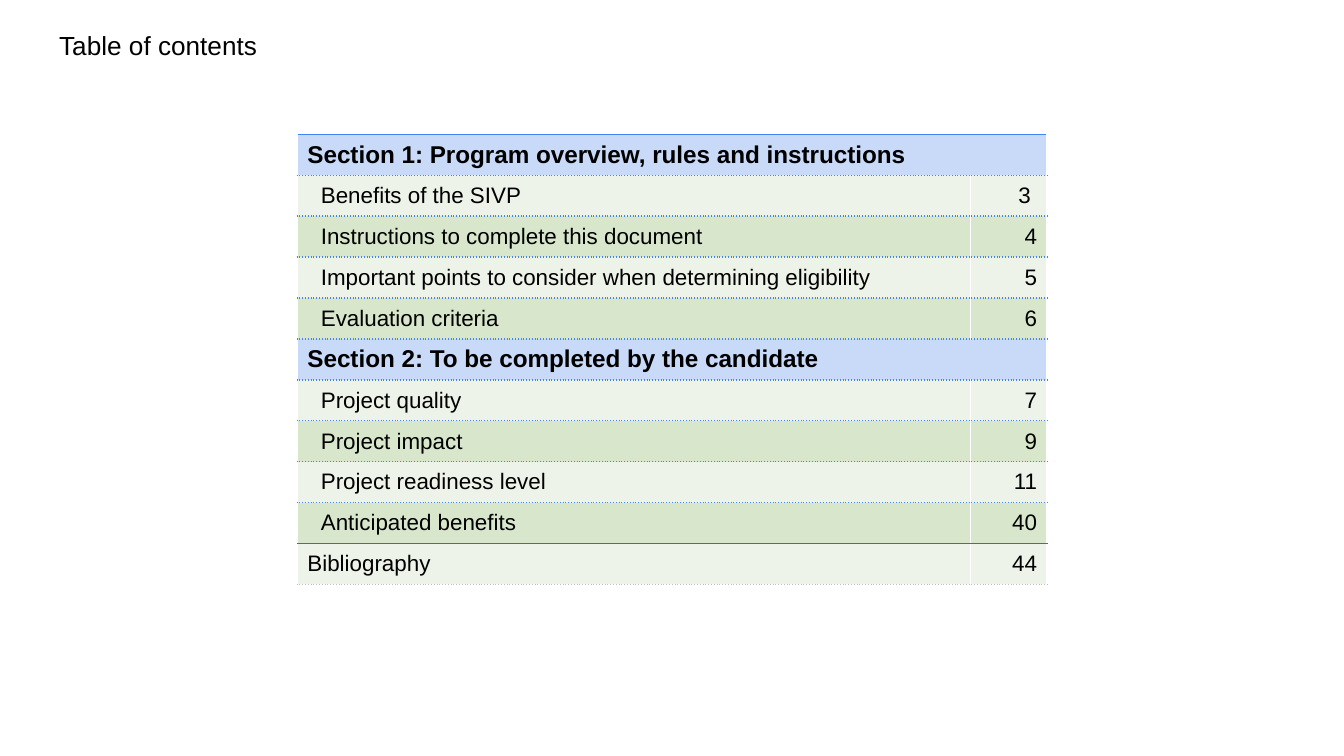
from lxml import etree
from pptx import Presentation
from pptx import util as u
from pptx.dml.color import RGBColor
from pptx.enum import text
from pptx.oxml import ns

COLORS = {
    "ink": "000000", "section": "C9DAF8", "light": "EDF3E8", "dark": "D8E7CB",
    "white": "FFFFFF", "blue": "4285F4", "gray": "63666A", "silver": "BFBFBF",
}
CONTENTS = [
    ("Section 1: Program overview, rules and instructions", None),
    ("Benefits of the SIVP", "3 "),
    ("Instructions to complete this document", "4"),
    ("Important points to consider when determining eligibility", "5"),
    ("Evaluation criteria", "6"),
    ("Section 2: To be completed by the candidate", None),
    ("Project quality", "7"),
    ("Project impact", "9"),
    ("Project readiness level", "11"),
    ("Anticipated benefits", "40"),
    ("Bibliography", "44"),
]
ROW_HEIGHT = 21.93
COLUMN_WIDTHS = (360.7, 41)
INDENT = 7.2


def write(paragraph, wording, size, bold=False):
    run = paragraph.add_run()
    run.text = wording
    run.font.color.rgb = RGBColor.from_string(COLORS["ink"])
    for name, value in {"name": "Arial", "size": u.Pt(size), "bold": bold}.items():
        setattr(run.font, name, value)


def border(cell, side, color, dash="solid"):
    line = etree.SubElement(cell._tc.get_or_add_tcPr(), ns.qn(f"a:ln{side}"), w=str(u.Pt(1)))
    fill = etree.SubElement(line, ns.qn("a:solidFill"))
    etree.SubElement(fill, ns.qn("a:srgbClr"), val=COLORS[color])
    etree.SubElement(line, ns.qn("a:prstDash"), val=dash)


deck = Presentation()
deck.slide_width, deck.slide_height = u.Pt(720), u.Pt(405)
slide = deck.slides.add_slide(deck.slide_layouts[5])

heading = slide.shapes.title
for name, value in {"left": 24.5, "top": 8.6, "width": 310.3, "height": 41}.items():
    setattr(heading, name, u.Pt(value))
heading_format = {
    "margin_left": u.Pt(7.2), "margin_top": u.Pt(7.2),
    "margin_right": u.Pt(7.2), "margin_bottom": u.Pt(7.2),
    "vertical_anchor": text.MSO_ANCHOR.TOP, "word_wrap": True,
    "auto_size": text.MSO_AUTO_SIZE.NONE,
}
for name, value in heading_format.items():
    setattr(heading.text_frame, name, value)
heading.text_frame.paragraphs[0].alignment = text.PP_ALIGN.LEFT
write(heading.text_frame.paragraphs[0], "Table of contents", 14)

contents = slide.shapes.add_table(
    len(CONTENTS), 2, u.Pt(159.3), u.Pt(72),
    u.Pt(sum(COLUMN_WIDTHS)), u.Pt(ROW_HEIGHT * len(CONTENTS)),
).table
contents.first_row = contents.horz_banding = False
for column, width in zip(contents.columns, COLUMN_WIDTHS):
    column.width = u.Pt(width)

rules = [("blue", "dot")] * (len(CONTENTS) + 1)
rules[0] = ("blue", "solid")
rules[-2:] = [("gray", "solid"), ("silver", "dot")]

entry_number = 0
for index, (entry, page) in enumerate(CONTENTS):
    contents.rows[index].height = u.Pt(ROW_HEIGHT)
    is_section = page is None
    entry_number = 0 if is_section else entry_number + 1
    shade = "section" if is_section else ("dark", "light")[entry_number % 2]
    is_indented = not is_section and entry != "Bibliography"
    cell_format = {
        "margin_left": u.Pt(5.4 + INDENT * is_indented), "margin_right": u.Pt(5.4),
        "margin_top": u.Pt(2.7), "margin_bottom": u.Pt(2.7),
        "vertical_anchor": text.MSO_ANCHOR.MIDDLE,
    }
    for cell in contents.rows[index].cells:
        for name, value in cell_format.items():
            setattr(cell, name, value)
        border(cell, "L", "white")
        border(cell, "R", "white")
        border(cell, "T", *rules[index])
        border(cell, "B", *rules[index + 1])
        cell.fill.solid()
        cell.fill.fore_color.rgb = RGBColor.from_string(COLORS[shade])

    entry_cell, page_cell = contents.rows[index].cells
    write(entry_cell.text_frame.paragraphs[0], entry, 13 if is_section else 12, is_section)
    if is_section:
        entry_cell.merge(page_cell)
    else:
        page_cell.text_frame.paragraphs[0].alignment = text.PP_ALIGN.RIGHT
        write(page_cell.text_frame.paragraphs[0], page, 12)

deck.save("out.pptx")
